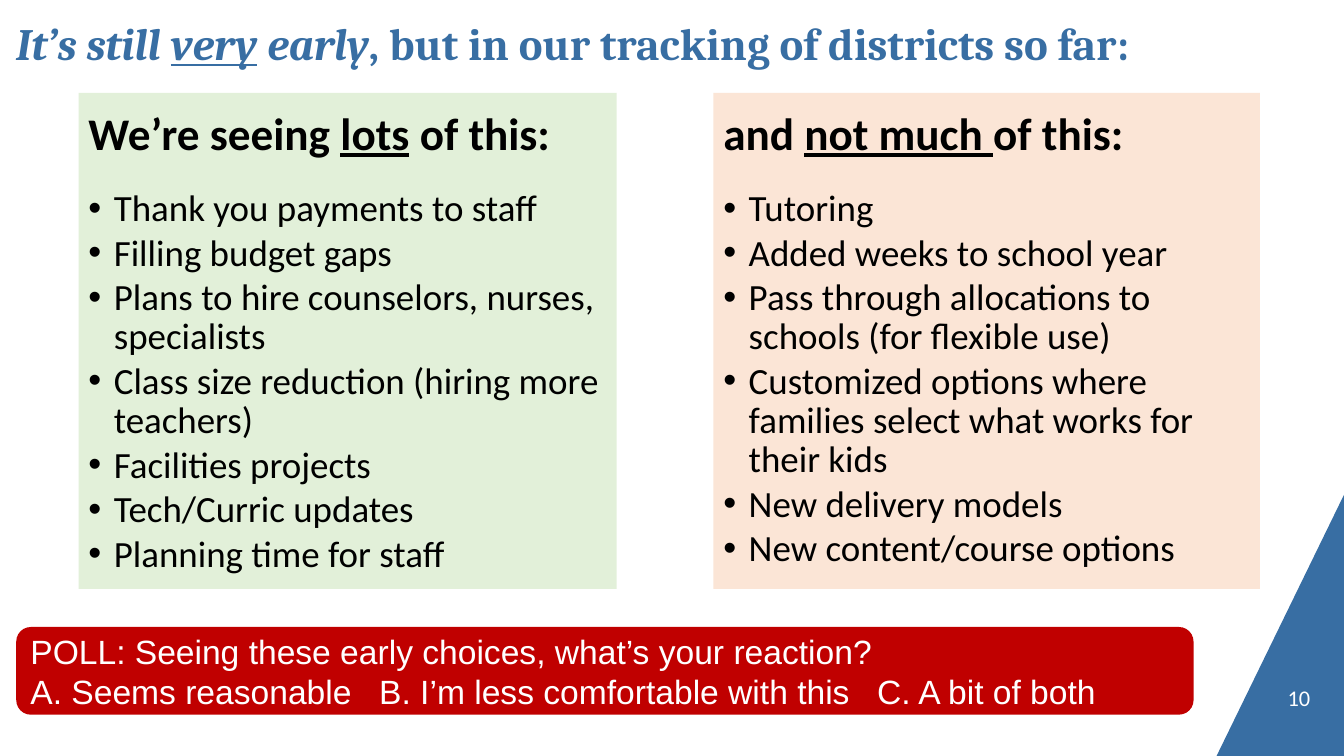
import pptx
import pptx.dml.color
import pptx.enum.shapes
import pptx.enum.text
import pptx.oxml
import pptx.oxml.ns
import pptx.util
from pptx.util import Cm, Pt

SHAPE = pptx.enum.shapes.MSO_SHAPE
ANCHOR = pptx.enum.text.MSO_ANCHOR
ALIGN = pptx.enum.text.PP_ALIGN

BLUE, WHITE, BLACK, RED = "386EA3", "FFFFFF", "000000", "C00000"
WIDTH, HEIGHT = 33.87, 19.05

# Spans are (text, style): "i" is italic, "u" is underlined.
TITLE = [("It’s still ", "i"), ("very", "iu"), (" early", "i"),
         (", but in our tracking of districts so far:", "")]
PANEL_TOP, PANEL_HEIGHT = 2.34, 12.5
PANELS = [
    {"left": 1.98, "width": 13.56, "fill": "E2F0D9",
     "heading": [("We’re seeing ", ""), ("lots", "u"), (" of this:", "")],
     "items": ["Thank you payments to staff", "Filling budget gaps",
               "Plans to hire counselors, nurses, specialists",
               "Class size reduction (hiring more teachers)",
               "Facilities projects", "Tech/Curric updates",
               "Planning time for staff"]},
    {"left": 17.98, "width": 13.77, "fill": "FBE5D6",
     "heading": [("and ", ""), ("not much ", "u"), ("of this:", "")],
     "items": ["Tutoring", "Added weeks to school year",
               "Pass through allocations to schools (for flexible use)",
               "Customized options where families select what works for their kids",
               "New delivery models", "New content/course options"]},
]
POLL = ["POLL: Seeing these early choices, what’s your reaction?",
        "A. Seems reasonable\tB. I’m less comfortable with this\tC. A bit of both"]
POLL_TABS = [8.79, 21.34]
CORNER = [(WIDTH, 12.47), (30.66, HEIGHT), (WIDTH, HEIGHT)]
PAGE_NUMBER = "10"


def rgb(value):
    return pptx.dml.color.RGBColor.from_string(value)


def paint(shape, color):
    """Give a shape a flat fill with no outline or shadow."""
    shape.shadow.inherit = False
    shape.fill.solid()
    shape.fill.fore_color.rgb = rgb(color)
    shape.line.fill.background()


def add_panel(page, kind, area, color, anchor):
    shape = page.shapes.add_shape(kind, *map(Cm, area))
    paint(shape, color)
    shape.text_frame.word_wrap = True
    shape.text_frame.vertical_anchor = anchor
    return shape.text_frame


def add_label(page, area, anchor):
    """Add a text box without margins."""
    frame = page.shapes.add_textbox(*map(Cm, area)).text_frame
    frame.word_wrap = True
    frame.vertical_anchor = anchor
    frame.margin_left = frame.margin_right = 0
    frame.margin_top = frame.margin_bottom = 0
    return frame


def add_xml(para, markup):
    namespace = pptx.oxml.ns.nsdecls("a")
    element = pptx.oxml.parse_xml(markup.replace(" ", f" {namespace} ", 1))
    para._p.get_or_add_pPr().append(element)


def write(para, spans, font, size, color, bold=False, align=ALIGN.LEFT):
    para.alignment = align
    para.font.name, para.font.size = font, Pt(size)
    para.font.bold = bold
    para.font.color.rgb = rgb(color)
    for text, style in spans:
        span = para.add_run()
        span.text = text
        if "i" in style:
            span.font.italic = True
        if "u" in style:
            span.font.underline = True


def add_bullet(frame, text):
    para = frame.add_paragraph()
    para.line_spacing, para.space_before = 0.88, Pt(4)
    properties = para._p.get_or_add_pPr()
    properties.set("marL", str(Cm(0.64)))
    properties.set("indent", str(-Cm(0.64)))
    add_xml(para, f'<a:buClr ><a:srgbClr val="{BLACK}"/></a:buClr>')
    add_xml(para, '<a:buFont typeface="Arial"/>')
    add_xml(para, '<a:buChar char="•"/>')
    write(para, [(text, "")], "Calibri", 26.4, BLACK)


def build():
    deck = pptx.Presentation()
    deck.slide_width, deck.slide_height = Cm(WIDTH), Cm(HEIGHT)
    page = deck.slides.add_slide(deck.slide_layouts[6])

    start, *others = [(Cm(x), Cm(y)) for x, y in CORNER]
    outline = page.shapes.build_freeform(*start)
    outline.add_line_segments(others, close=True)
    paint(outline.convert_to_shape(), BLUE)

    number = add_label(page, (31.75, 17.15, 1.27, 0.76), ANCHOR.BOTTOM)
    write(number.paragraphs[0], [(PAGE_NUMBER, "")], "Calibri", 16, WHITE,
          align=ALIGN.RIGHT)

    title = add_label(page, (0.41, -0.03, 33.07, 2.21), ANCHOR.MIDDLE)
    write(title.paragraphs[0], TITLE, "Cambria", 32, BLUE, bold=True)

    for panel in PANELS:
        area = panel["left"], PANEL_TOP, panel["width"], PANEL_HEIGHT
        frame = add_panel(page, SHAPE.RECTANGLE, area, panel["fill"], ANCHOR.TOP)
        heading = frame.paragraphs[0]
        heading.line_spacing, heading.space_after = 1.14, Pt(18)
        write(heading, panel["heading"], "Calibri", 32.3, BLACK, bold=True)
        for item in panel["items"]:
            add_bullet(frame, item)

    poll = add_panel(page, SHAPE.ROUNDED_RECTANGLE, (0.41, 15.8, 29.67, 2.21),
                     RED, ANCHOR.MIDDLE)
    stops = "".join(f'<a:tab pos="{Cm(stop)}" algn="l"/>' for stop in POLL_TABS)
    for index, line in enumerate(POLL):
        para = poll.add_paragraph() if index else poll.paragraphs[0]
        if "\t" in line:
            add_xml(para, f"<a:tabLst >{stops}</a:tabLst>")
        write(para, [(line, "")], "Arial", 24, WHITE)

    deck.save("out.pptx")


if __name__ == "__main__":
    build()
